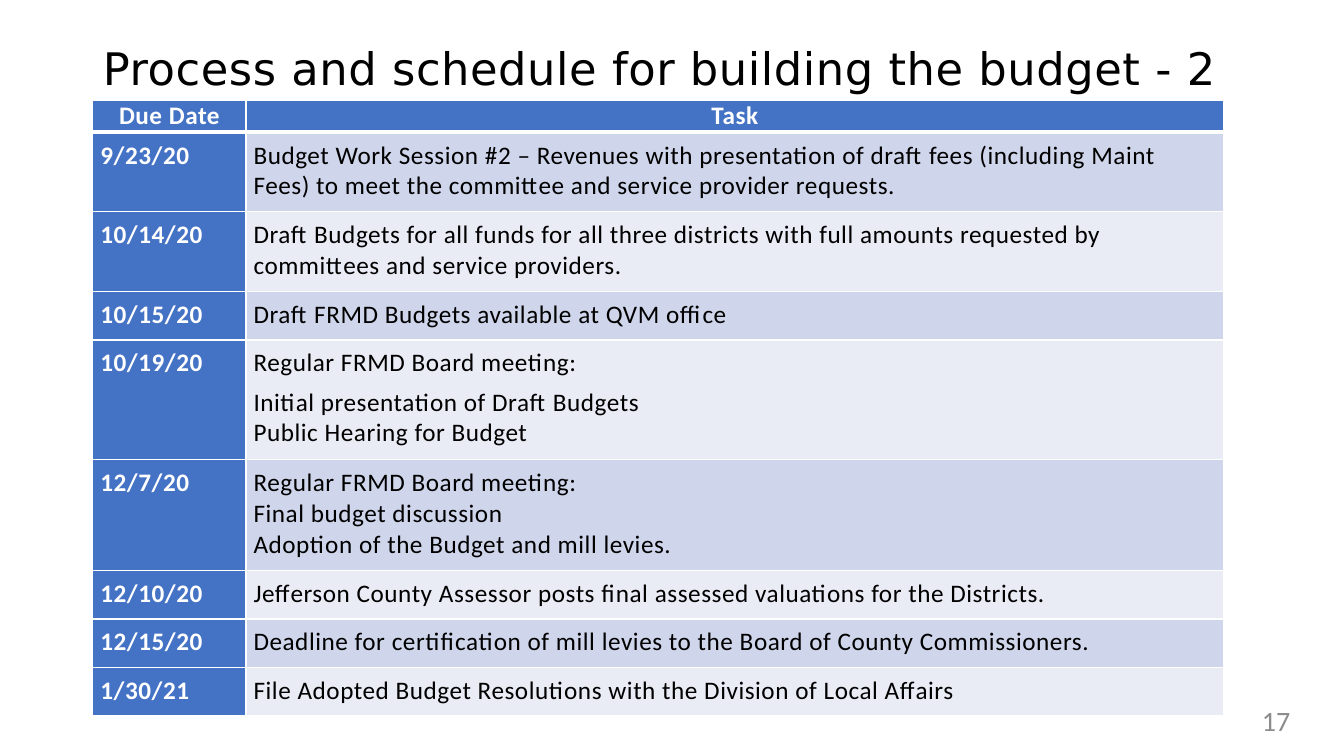
from lxml.etree import SubElement
from pptx import Presentation
from pptx.dml.color import RGBColor
from pptx.enum.text import MSO_ANCHOR as Anchor, MSO_AUTO_SIZE as AutoSize, PP_ALIGN as Align
from pptx.oxml.ns import qn
from pptx.util import Cm, Pt

BLUE, WHITE, BLACK = "4472C4", "FFFFFF", "000000"
BANDS = ["CFD5EA", "E9EBF5"]


def style(paragraph, face, size, color, bold=False, spacing=0):
    font = paragraph.font
    font.name, font.size, font.bold = face, Pt(size), bold
    font.color.rgb = RGBColor.from_string(color)
    if spacing:
        paragraph._p.pPr.find(qn("a:defRPr")).set("spc", str(spacing))


def border(cell, widths):
    for side, width in zip("LRTB", widths):
        line = SubElement(cell._tc.get_or_add_tcPr(), qn(f"a:ln{side}"), w=str(Pt(width)))
        SubElement(SubElement(line, qn("a:solidFill")), qn("a:srgbClr"), val=WHITE)


# Due date, row height in cm, task paragraphs
schedule = [
    ("Due Date", 0.79, ["Task"]),
    ("9/23/20", 2.01, ["Budget Work Session #2 – Revenues with presentation of draft fees "
                       "(including Maint Fees) to meet the committee and service provider requests."]),
    ("10/14/20", 2.01, ["Draft Budgets for all funds for all three districts with full amounts "
                        "requested by committees and service providers."]),
    ("10/15/20", 1.22, ["Draft FRMD Budgets available at QVM office"]),
    ("10/19/20", 3.02, ["Regular FRMD Board meeting:",
                        "Initial presentation of Draft Budgets\nPublic Hearing for Budget"]),
    ("12/7/20", 2.79, ["Regular FRMD Board meeting: \nFinal budget discussion \n"
                       "Adoption of the Budget and mill levies."]),
    ("12/10/20", 1.22, ["Jefferson County Assessor posts final assessed valuations for the Districts."]),
    ("12/15/20", 1.22, ["Deadline for certification of mill levies to the Board of County Commissioners."]),
    ("1/30/21", 1.22, ["File Adopted Budget Resolutions with the Division of Local Affairs"]),
]

deck = Presentation()
deck.slide_width, deck.slide_height = Cm(33.87), Cm(19.05)
slide = deck.slides.add_slide(deck.slide_layouts[5])

# Title
title = slide.shapes.title
title.left, title.top, title.width, title.height = Cm(2.34), Cm(1.02), Cm(29.21), Cm(1.52)
heading = title.text_frame
heading.text = "Process and schedule for building the budget - 2"
heading.auto_size, heading.vertical_anchor = AutoSize.NONE, Anchor.MIDDLE
heading.paragraphs[0].alignment = Align.LEFT
heading.paragraphs[0].line_spacing = 0.9
style(heading.paragraphs[0], "DejaVu Sans", 32, BLACK, spacing=40)

# Schedule table
table = slide.shapes.add_table(len(schedule), 2, Cm(2.34), Cm(2.54), Cm(28.5), Cm(15.5)).table
table.first_col = True
table.columns[0].width, table.columns[1].width = Cm(3.86), Cm(24.64)
for row, (due_date, height, tasks) in enumerate(schedule):
    table.rows[row].height = Cm(height)
    is_header = row == 0
    for column, paragraphs in enumerate([[due_date], tasks]):
        cell = table.cell(row, column)
        strong = is_header or column == 0
        border(cell, [1, 1, 3 if row == 1 else 1, 3 if is_header else 1])
        cell.fill.solid()
        cell.fill.fore_color.rgb = RGBColor.from_string(BLUE if strong else BANDS[(row - 1) % 2])
        cell.margin_left = cell.margin_right = Cm(0.19)
        cell.margin_top = cell.margin_bottom = Cm(0 if is_header else 0.2)
        for index, words in enumerate(paragraphs):
            frame = cell.text_frame
            paragraph = frame.add_paragraph() if index else frame.paragraphs[0]
            paragraph.text = words
            paragraph.alignment = Align.CENTER if is_header else Align.LEFT
            paragraph.space_before = paragraph.space_after = Pt(3)
            style(paragraph, "Calibri", 18, WHITE if strong else BLACK, strong, 40)

# Page number
page_number = slide.shapes.add_textbox(Cm(23.93), Cm(17.65), Cm(8.84), Cm(1.02)).text_frame
page_number.word_wrap = True
page_number.vertical_anchor = Anchor.MIDDLE
page_number.text = "17"
page_number.paragraphs[0].alignment = Align.RIGHT
style(page_number.paragraphs[0], "Calibri", 20, "8C8C8C")

deck.save("out.pptx")
